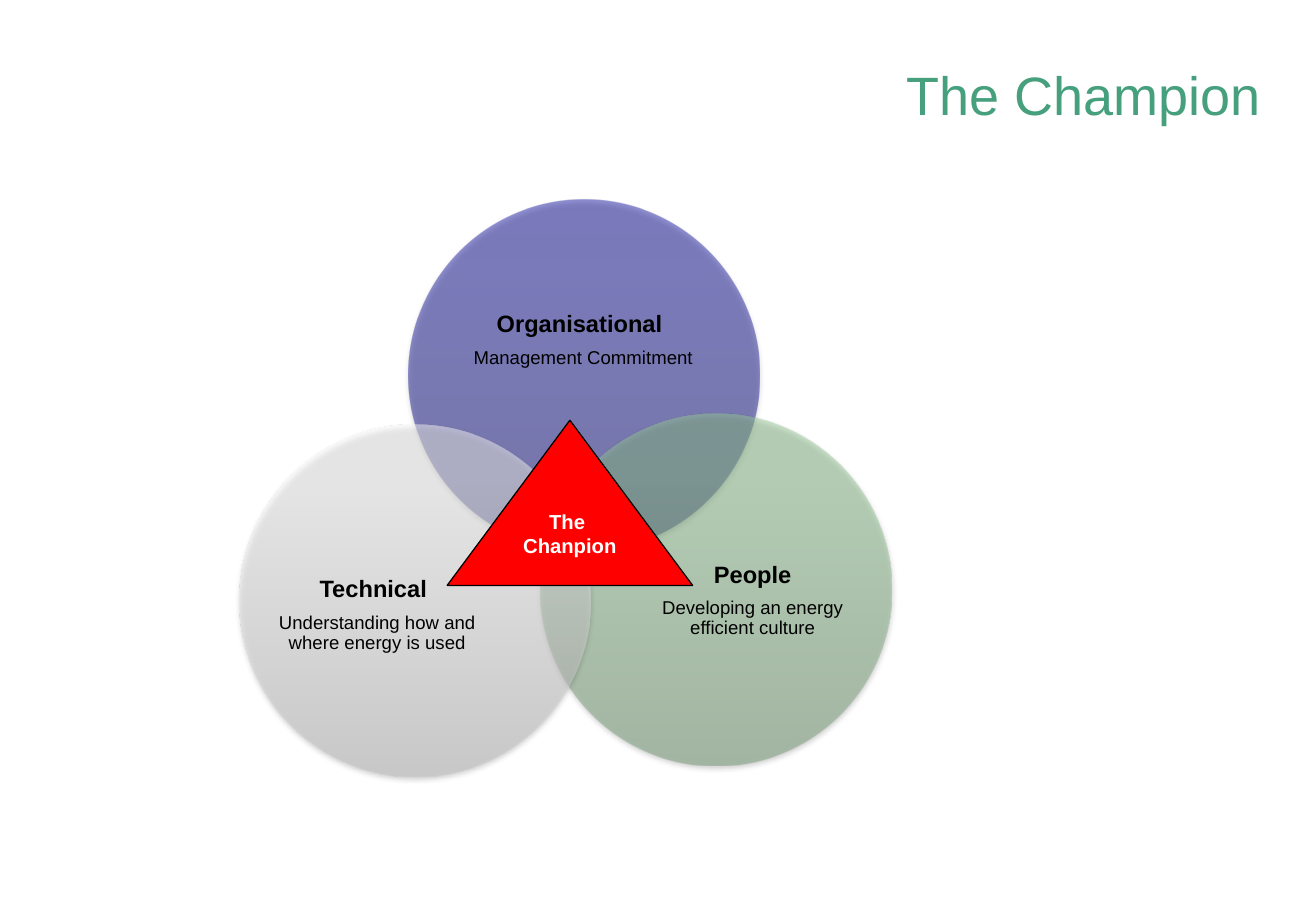
from dataclasses import dataclass

from pptx import Presentation
from pptx.dml.color import RGBColor
from pptx.enum.shapes import MSO_SHAPE as SHAPE
from pptx.enum.text import MSO_ANCHOR as ANCHOR, PP_ALIGN as ALIGN
from pptx.oxml import parse_xml
from pptx.oxml.ns import nsdecls, qn
from pptx.util import Emu, Pt

PX = 9144  # EMU per px, 100 px to the inch
CIRCLE_SIZE = 289
STOPS = (0, 80, 100)

Box = tuple[int, int, int, int]


@dataclass
class Run:
    text: str
    size: int
    color: str = "000000"
    bold: bool = False


@dataclass
class Area:
    left: int
    top: int
    colors: tuple[str, str, str]
    label_box: Box
    heading: list[Run]
    detail: str


AREAS = [
    Area(336, 164, ("1B1B7E", "2323A3", "2020A6"), (374, 214, 212, 130),
         [Run("Organisational", 14, bold=True), Run(" ", 16, bold=True)],
         "Management Commitment"),
    Area(445, 341, ("739873", "95C595", "95C795"), (533, 415, 173, 159),
         [Run("People", 14, bold=True)],
         "Developing an energy efficient culture"),
    Area(197, 350, ("BEBEBE", "F7F7F7", "F8F8F8"), (224, 425, 173, 159),
         [Run("Technical", 14, bold=True), Run(" ", 17, bold=True)],
         "Understanding how and where energy is used"),
]


def px(*values: int) -> list[Emu]:
    return [Emu(v * PX) for v in values]


def rgb(color: str) -> RGBColor:
    return RGBColor.from_string(color)


def write(tf, paragraphs: list[list[Run]], **fmt) -> None:
    """Fill a text frame; fmt holds paragraph attributes."""
    for i, runs in enumerate(paragraphs):
        p = tf.paragraphs[0] if i == 0 else tf.add_paragraph()
        for name, value in fmt.items():
            setattr(p, name, value)
        for run in runs:
            r = p.add_run()
            r.text = run.text
            for name, value in {"name": "Arial", "size": Pt(run.size), "bold": run.bold}.items():
                setattr(r.font, name, value)
            r.font.color.rgb = rgb(run.color)


def add_text(s, box: Box, paragraphs: list[list[Run]], **fmt) -> None:
    tf = s.shapes.add_textbox(*px(*box)).text_frame
    frame = {"word_wrap": True, "vertical_anchor": ANCHOR.MIDDLE, "margin_left": 0,
             "margin_right": 0, "margin_top": 0, "margin_bottom": 0}
    for name, value in frame.items():
        setattr(tf, name, value)
    write(tf, paragraphs, **fmt)


def add_circle(s, area: Area) -> None:
    """Draw a half-transparent circle, shaded upwards, with a soft shadow."""
    sp = s.shapes.add_shape(SHAPE.OVAL, *px(area.left, area.top, CIRCLE_SIZE, CIRCLE_SIZE))
    sp.line.fill.background()
    sp.shadow.inherit = False
    stops = "".join(
        f'<a:gs pos="{pos * 1000}"><a:srgbClr val="{color}"><a:alpha val="50000"/></a:srgbClr></a:gs>'
        for pos, color in zip(STOPS, area.colors))
    spPr = sp._element.spPr
    spPr.find(qn("a:prstGeom")).addnext(parse_xml(
        f'<a:gradFill {nsdecls("a")} rotWithShape="1"><a:gsLst>{stops}</a:gsLst>'
        '<a:lin ang="16200000" scaled="0"/></a:gradFill>'))
    spPr.find(qn("a:effectLst")).append(parse_xml(
        f'<a:outerShdw {nsdecls("a")} blurRad="{Pt(3.1)}" dist="{Pt(1.8)}" dir="5400000" '
        'rotWithShape="0"><a:srgbClr val="000000"><a:alpha val="35000"/></a:srgbClr></a:outerShdw>'))


def add_champion(s) -> None:
    sp = s.shapes.add_shape(SHAPE.ISOSCELES_TRIANGLE, *px(368, 346, 202, 136))
    sp.shadow.inherit = False
    sp.fill.solid()
    sp.fill.fore_color.rgb = rgb("FF0000")
    sp.line.color.rgb = rgb("000000")
    sp.line.width = Pt(0.75)
    tf = sp.text_frame
    tf.word_wrap = True
    tf.vertical_anchor = ANCHOR.TOP
    lines = [[Run(text, 12, "FFFFFF", True)] for text in ("The ", "Chanpion")]
    write(tf, lines, alignment=ALIGN.CENTER)


def main() -> None:
    prs = Presentation()
    prs.slide_width, prs.slide_height = px(1083, 750)
    s = prs.slides.add_slide(prs.slide_layouts[6])
    add_text(s, (81, 44, 957, 66), [[Run("The Champion", 32, "46A07D")]], alignment=ALIGN.RIGHT)
    for area in AREAS:
        add_circle(s, area)
        add_text(s, area.label_box, [area.heading, [Run(area.detail, 11)]],
                 alignment=ALIGN.CENTER, line_spacing=0.9, space_after=Pt(6))
    add_champion(s)
    prs.save("out.pptx")


if __name__ == "__main__":
    main()
